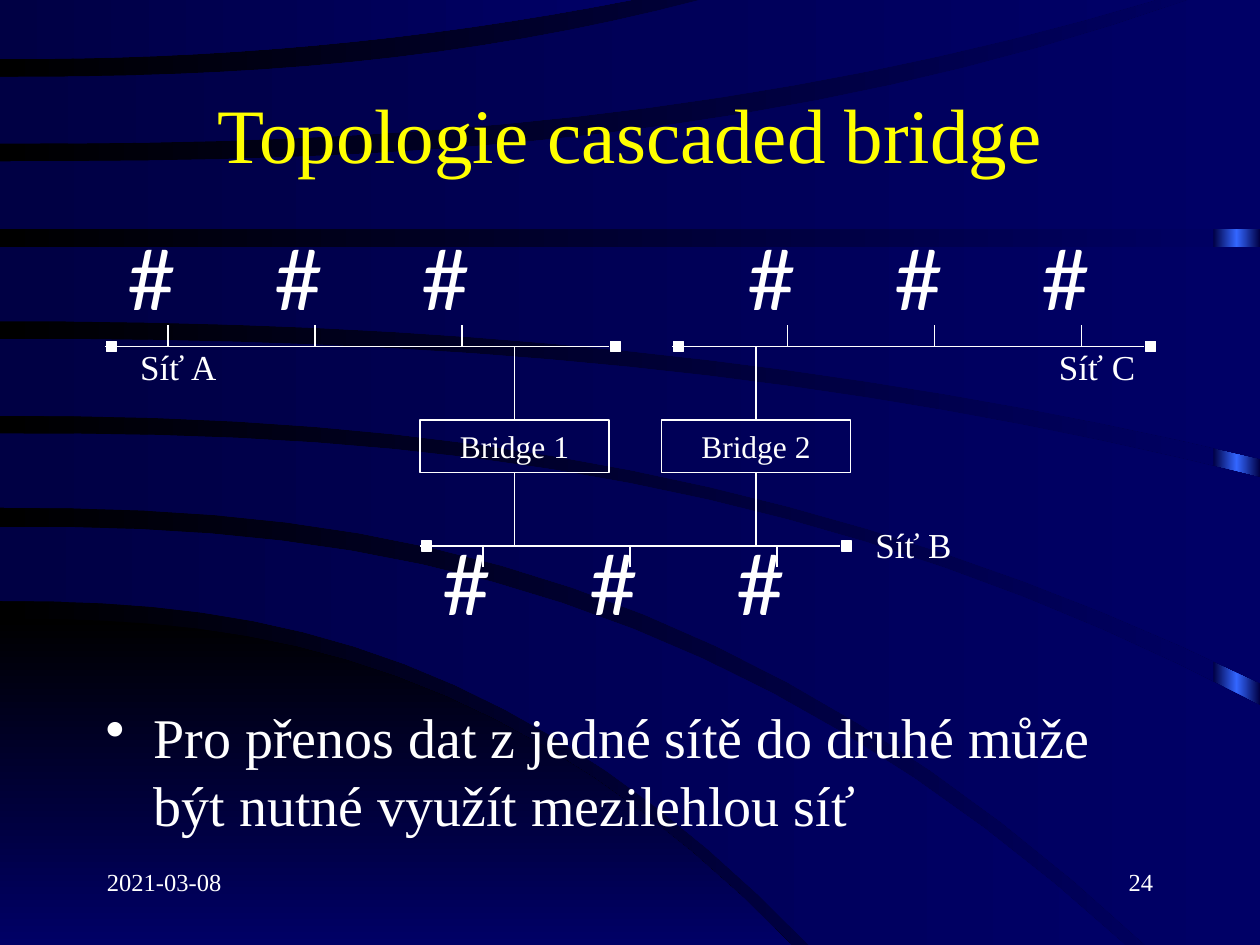
from lxml import etree
from pptx import Presentation
from pptx.dml.color import RGBColor
from pptx.enum.shapes import MSO_CONNECTOR, MSO_SHAPE
from pptx.enum.text import MSO_ANCHOR, MSO_AUTO_SIZE, PP_ALIGN
from pptx.oxml.ns import qn
from pptx.util import Inches, Pt

RECT, STRAIGHT = MSO_SHAPE.RECTANGLE, MSO_CONNECTOR.STRAIGHT
TOP, MIDDLE = MSO_ANCHOR.TOP, MSO_ANCHOR.MIDDLE
LEFT, CENTER, RIGHT = PP_ALIGN.LEFT, PP_ALIGN.CENTER, PP_ALIGN.RIGHT
GROW = MSO_AUTO_SIZE.SHAPE_TO_FIT_TEXT

C = {"white": "FFFFFF", "yellow": "FFFF00", "black": "000000",
     "dark": "000044", "navy": "000066", "blue": "3366FF"}
SERIF, SANS = "Times New Roman", "Lato"
W, H = 10, 7.5
U = W / 120

TITLE = "Topologie cascaded bridge"
BODY = "Pro přenos dat z jedné sítě do druhé může být nutné využít mezilehlou síť"
DATE, NUMBER = "2021-03-08", "24"

STEPS = 16
CORNER = {"upper": (4.91, 6.28, H), "lower": (H, 6.28, H), "power": 2.5}
BANDS = [
    {"upper": (4.18, 8.93, H), "lower": (4.77, 6.42, H), "power": 2.45},
    {"upper": (3.44, W, 5.6), "lower": (4.03, 9.09, H), "power": 2.45},
    {"upper": (2.69, W, 3.79), "lower": (3.3, W, 5.42), "power": 2.3},
    {"upper": (1.96, W, 1.96), "lower": (2.55, W, 3.64), "power": 2.2},
    {"upper": (1.28, 9.43, 0), "lower": (1.82, W, 1.82), "power": 2.6},
    {"upper": (0.61, 5.56, 0), "lower": (1.14, 9.17, 0), "power": 2.4},
    {"upper": (0, 5.01, 0), "lower": (0.47, 5.01, 0), "power": 2.1},
]

HOST, HOST_GAP, HOSTS = "#", 14, 3
NETWORKS = [
    {"bus": (10, 58), "y": 33, "tick": 16, "dy": -2, "host_y": 21,
     "name": "Síť A", "label": (11, 33, 12)},
    {"bus": (40, 80), "y": 52, "tick": 46, "dy": 2, "host_y": 50,
     "name": "Síť B", "label": (82, 50, 10)},
    {"bus": (64, 109), "y": 33, "tick": 75, "dy": -2, "host_y": 21,
     "name": "Síť C", "label": (99, 33, 11)},
]
BRIDGES = [("Bridge 1", 40), ("Bridge 2", 63)]
BRIDGE_W, BRIDGE_Y, BRIDGE_H = 18, 40, 5


def color(name):
    return RGBColor.from_string(C[name])


def gradient(fill, element, names, angle=0):
    fill.gradient()
    fill.gradient_angle = angle
    stops = element.find(".//" + qn("a:gsLst"))
    for stop in list(stops):
        stops.remove(stop)
    for i, name in enumerate(names):
        gs = etree.SubElement(stops, qn("a:gs"), pos=str(100000 * i // (len(names) - 1)))
        etree.SubElement(gs, qn("a:srgbClr"), val=C[name])


def curve(edge, power):
    y0, x1, y1 = edge
    shares = [i / STEPS for i in range(STEPS + 1)]
    return [(x1 * t, y0 + (y1 - y0) * t ** power) for t in shares]


def sweep(s, band, names, angle=0):
    upper, lower = [curve(band[k], band["power"]) for k in ("upper", "lower")]
    ends = sorted([upper[-1], lower[-1]])
    corner = (ends[1][0], ends[0][1])
    points = upper + [corner] + lower[::-1]
    start, *rest = [(Inches(x), Inches(y)) for x, y in points]
    builder = s.shapes.build_freeform(*start)
    builder.add_line_segments(rest, close=True)
    sp = builder.convert_to_shape()
    sp.shadow.inherit = False
    sp.line.fill.background()
    gradient(sp.fill, sp._element, names, angle)


def rect(s, x, y, w, h):
    sp = s.shapes.add_shape(RECT, *[Inches(v) for v in (x, y, w, h)])
    sp.shadow.inherit = False
    return sp


def border(sp):
    sp.line.color.rgb = color("white")
    sp.line.width = Pt(0.75)


def line(s, x1, y1, x2, y2):
    cn = s.shapes.add_connector(STRAIGHT, *[Inches(v * U) for v in (x1, y1, x2, y2)])
    border(cn)
    etree.SubElement(cn._element.spPr, qn("a:effectLst"))


def write(sp, text, size, font=SERIF, ink="white", align=LEFT, anchor=TOP, wrap=True):
    tf = sp.text_frame
    tf.text = text
    tf.word_wrap = wrap
    tf.vertical_anchor = anchor
    p = tf.paragraphs[0]
    p.alignment = align
    r = p.runs[0]
    r.font.size, r.font.name = Pt(size), font
    r.font.color.rgb = color(ink)
    return p


def box(s, x, y, w, h):
    return s.shapes.add_textbox(*[Inches(v) for v in (x, y, w, h)])


def backdrop(s):
    gradient(s.background.fill, s._element, ["black", "navy"])
    strip = rect(s, 0.963 * W, 0, 0.037 * W, H)
    strip.line.fill.background()
    gradient(strip.fill, strip._element, ["dark", "blue", "dark"])
    sweep(s, CORNER, ["black", "navy"], 270)
    for band in BANDS:
        sweep(s, band, ["dark", "navy"])


def network(s, net):
    y = net["y"]
    line(s, net["bus"][0], y, net["bus"][1], y)
    for i in range(HOSTS):
        x = net["tick"] + i * HOST_GAP
        line(s, x, y + net["dy"], x, y)
        host = box(s, (x - 5) * U, net["host_y"] * U, 0.87, 0.9)
        write(host, HOST, 48, SANS, wrap=False)
        host.text_frame.auto_size = GROW
    for x in net["bus"]:
        end = rect(s, x * U + 0.01, y * U - 0.04, 0.08, 0.08)
        end.fill.solid()
        end.fill.fore_color.rgb = color("white")
        border(end)
    x, top, w = net["label"]
    write(box(s, x * U, top * U, w * U, 0.31), net["name"], 20,
          align=CENTER, anchor=MIDDLE, wrap=False)


def bridge(s, name, x):
    sp = rect(s, x * U, BRIDGE_Y * U, BRIDGE_W * U, BRIDGE_H * U)
    sp.fill.background()
    border(sp)
    write(sp, name, 18, align=CENTER, anchor=MIDDLE, wrap=False)
    mid = x + BRIDGE_W / 2
    line(s, mid, NETWORKS[0]["y"], mid, BRIDGE_Y)
    line(s, mid, BRIDGE_Y + BRIDGE_H, mid, NETWORKS[1]["y"])


def main():
    prs = Presentation()
    prs.slide_width, prs.slide_height = Inches(W), Inches(H)
    s = prs.slides.add_slide(prs.slide_layouts[6])
    backdrop(s)
    write(box(s, 0.75, 6.83, 2.08, 0.5), DATE, 14)
    write(box(s, 7.17, 6.83, 2.08, 0.5), NUMBER, 14, align=RIGHT)
    write(box(s, 0.75, 0.47, 8.5, 1.16), TITLE, 44, ink="yellow", align=CENTER, anchor=MIDDLE)
    p = write(box(s, 0.74, 5.53, 8.5, 1.13), BODY, 32)
    p.space_before = Pt(6)
    pPr = p._p.get_or_add_pPr()
    pPr.set("marL", str(Inches(0.38)))
    pPr.set("indent", str(-Inches(0.38)))
    etree.SubElement(pPr, qn("a:buChar"), char="•")
    for net in NETWORKS:
        network(s, net)
    for name, x in BRIDGES:
        bridge(s, name, x)
    prs.save("out.pptx")


if __name__ == "__main__":
    main()
